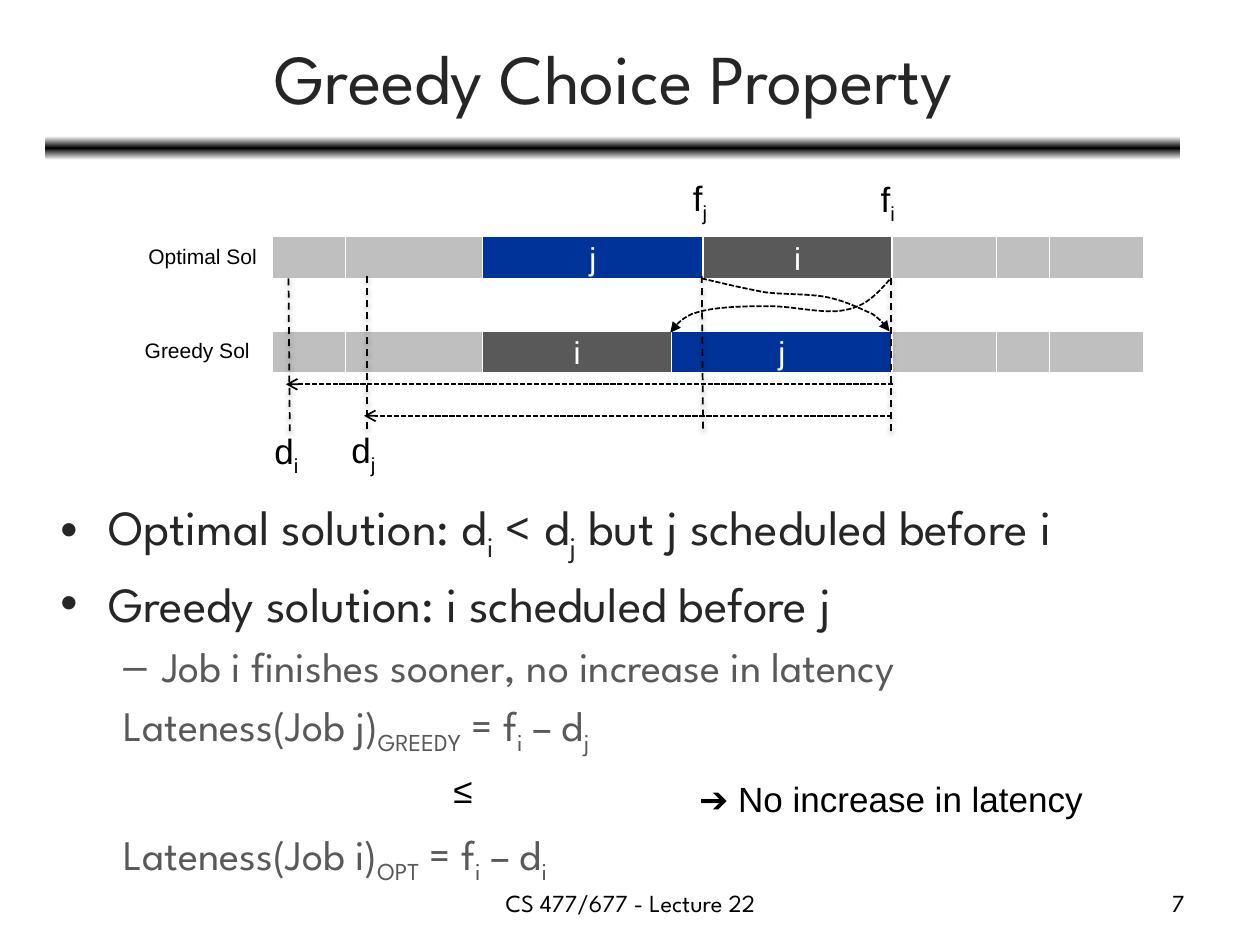
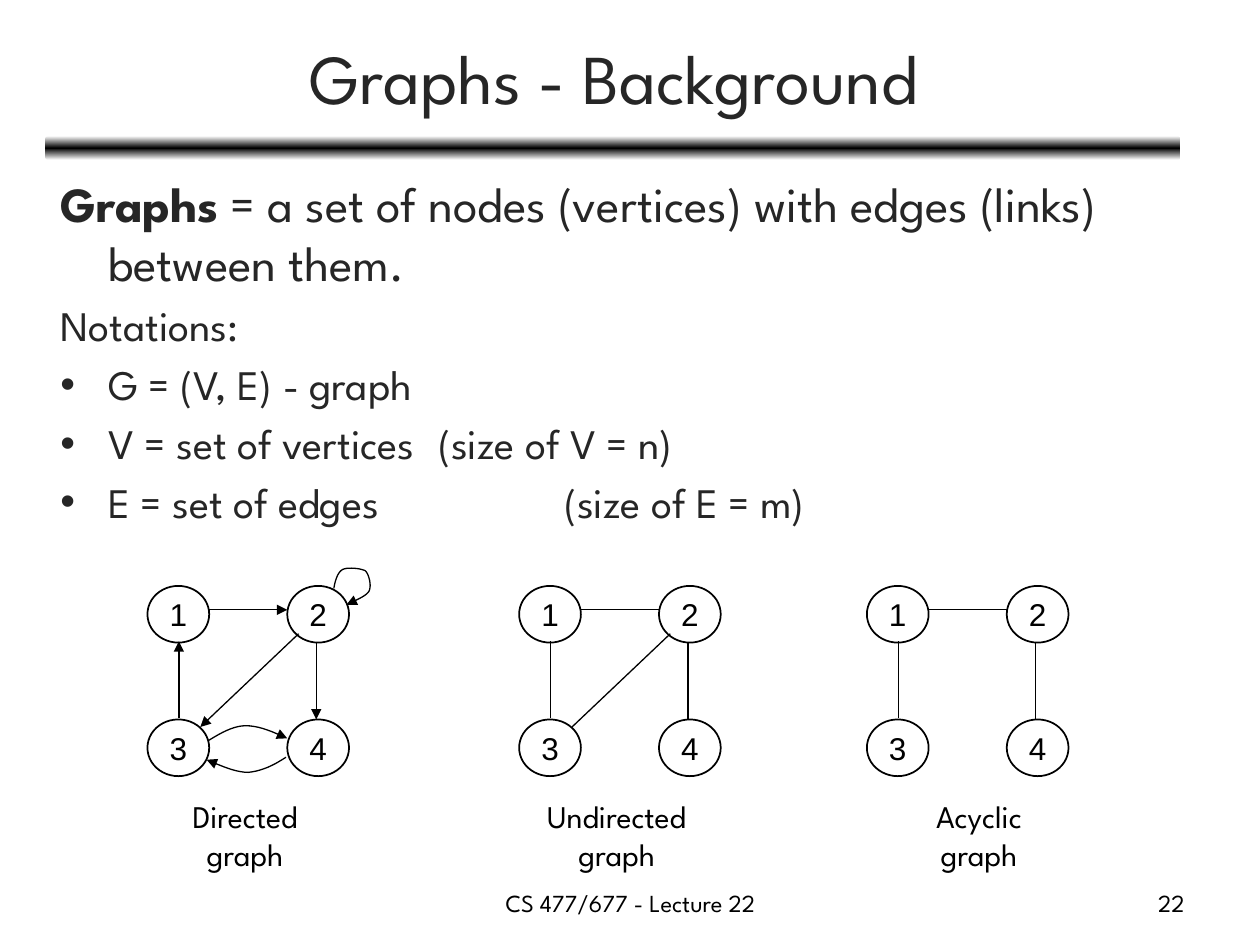
from copy import deepcopy
from math import comb

from lxml import etree
from pptx import Presentation
from pptx.dml.color import RGBColor
from pptx.enum.dml import MSO_LINE
from pptx.enum.shapes import MSO_CONNECTOR, MSO_SHAPE
from pptx.enum.text import MSO_ANCHOR, MSO_AUTO_SIZE, PP_ALIGN
from pptx.oxml.ns import qn
from pptx.util import Pt

PX = 9144  # 100 px to the inch
BLACK = RGBColor(0, 0, 0)
WHITE = RGBColor(255, 255, 255)
DARK = RGBColor(0x26, 0x26, 0x26)
GREY = RGBColor(0x59, 0x59, 0x59)
PALE = RGBColor(0xBF, 0xBF, 0xBF)
BLUE = RGBColor(0x00, 0x33, 0x99)
HEAD, SANS = "League Spartan", "Arial"
LEFT, MID, RIGHT = PP_ALIGN.LEFT, PP_ALIGN.CENTER, PP_ALIGN.RIGHT
RECT, OVAL, ROUND = MSO_SHAPE.RECTANGLE, MSO_SHAPE.OVAL, MSO_SHAPE.ROUNDED_RECTANGLE
DASH, DOTS = MSO_LINE.DASH, MSO_LINE.SQUARE_DOT
STRAIGHT = MSO_CONNECTOR.STRAIGHT
MIDDLE, FIXED = MSO_ANCHOR.MIDDLE, MSO_AUTO_SIZE.NONE


def write(par, text, size, color, font=HEAD, align=LEFT):
    """Add text run by run; every second part between bars is a subscript."""
    par.alignment = align
    for n, part in enumerate(text.split("|")):
        if part:
            run = par.add_run()
            run.text = part
            run.font.size, run.font.name = Pt(size), font
            run.font.color.rgb = color
            if n % 2:
                run.font._element.set("baseline", "-25000")


def ink(shape, width, dash=None, tip=None):
    """Style a line or curve; long dashes carry a soft shadow."""
    shape.line.color.rgb = BLACK
    shape.line.width = Pt(width)
    if dash:
        shape.line.dash_style = dash
    props = shape.element.spPr
    if tip:
        etree.SubElement(props.find(qn("a:ln")), qn("a:tailEnd"), type=tip)
    for old in props.findall(qn("a:effectLst")):
        props.remove(old)
    effect = etree.SubElement(props, qn("a:effectLst"))
    if dash == DASH:
        shade = etree.SubElement(effect, qn("a:outerShdw"), blurRad="40000",
                                 dist="20000", dir="5400000", rotWithShape="0")
        tone = etree.SubElement(shade, qn("a:srgbClr"), val="000000")
        etree.SubElement(tone, qn("a:alpha"), val="38000")


deck = Presentation()
deck.slide_width, deck.slide_height = 1000 * PX, 750 * PX

# Text of both slides: level, left margin, indent, bullet, size, text
TOP = (0, 38, -38, "•", 28)
ITEM = (0, 38, -38, "•", 24)
SUB = (1, 50, 0, None, 24)
greedy = [
    (*TOP, "Optimal solution: d|i| < d|j| but j scheduled before i"),
    (*TOP, "Greedy solution: i scheduled before j"),
    (1, 81, -31, "–", 24, "Job i finishes sooner, no increase in latency"),
    (*SUB, "Lateness(Job j)|GREEDY| = f|i| – d|j"),
    (*SUB, "Lateness(Job i)|OPT| = f|i| – d|i"),
]
graphs = [
    (0, 38, -38, None, 28,
     "Graphs|| = a set of nodes (vertices) with edges (links) between them."),
    (0, 38, -38, None, 24, "Notations:"),
    (*ITEM, "G = (V, E) - graph"),
    (*ITEM, "V = set of vertices\t(size of V = n)"),
    (*ITEM, "E = set of edges\t\t(size of E = m)"),
]
plan = [
    ("Greedy Choice Property", greedy, (38, 389, 973, 299)),
    ("Graphs - Background", graphs, (38, 133, 900, 303)),
]

# Title, band and list on each slide
slides, lists = [], []
for name, rows, box in plan:
    slide = deck.slides.add_slide(deck.slide_layouts[1])
    slides.append(slide)
    title, body = slide.placeholders
    for hold, (x, y, w, h) in ((title, (37, 11, 900, 99)), (body, box)):
        hold.left, hold.top, hold.width, hold.height = x * PX, y * PX, w * PX, h * PX
        hold.text_frame.auto_size = FIXED
    title.text_frame.vertical_anchor = MIDDLE
    write(title.text_frame.paragraphs[0], name, 40, DARK, align=MID)

    band = slide.shapes.add_shape(ROUND, 36 * PX, 108 * PX, 901 * PX, 19 * PX)
    band.shadow.inherit = False
    band.line.fill.background()
    band.fill.gradient()
    band.fill.gradient_angle = 90
    stops = next(band.element.iter(qn("a:gsLst")))
    stops.append(deepcopy(stops[0]))
    for stop, at, color in zip(band.fill.gradient_stops, (0, 0.5, 1),
                               (WHITE, BLACK, WHITE)):
        stop.position, stop.color.rgb = at, color

    frame = body.text_frame
    lists.append(frame)
    for n, (level, edge, dent, mark, size, text) in enumerate(rows):
        par = frame.add_paragraph() if n else frame.paragraphs[0]
        par.level = level
        write(par, text, size, GREY if level else DARK)
        props = par._p.get_or_add_pPr()
        for key, val in (("marL", edge * PX), ("indent", dent * PX),
                         ("defTabSz", 100 * PX)):
            props.set(key, str(val))
        if mark:
            etree.SubElement(props, qn("a:buFont"), typeface=SANS)
            etree.SubElement(props, qn("a:buChar"), char=mark)
        else:
            etree.SubElement(props, qn("a:buNone"))

one, two = slides
lists[0].paragraphs[-1].space_before = Pt(41)  # room for the ≤ sign
lists[1].paragraphs[0].runs[0].font.bold = True

# Schedules: the greedy one swaps jobs i and j
pads = [(58, PALE, ""), (109, PALE, "")]
jobs = [(175, BLUE, "j"), (150, GREY, "i")]
rest = [(83, PALE, ""), (42, PALE, ""), (75, PALE, "")]
for y, pair in ((188, jobs), (263, jobs[::-1])):
    x = 216
    for w, color, job in pads + pair + rest:
        bar = one.shapes.add_shape(RECT, x * PX, y * PX, w * PX, 33 * PX)
        bar.shadow.inherit = False
        bar.fill.solid()
        bar.fill.fore_color.rgb = color
        bar.line.color.rgb = WHITE
        bar.line.width = Pt(0.75)
        if job:
            bar.text_frame.word_wrap = False
            bar.text_frame.vertical_anchor = MIDDLE
            write(bar.text_frame.paragraphs[0], job, 18, WHITE, SANS, MID)
        x += w

# Lines: slide, from, to, width, dash, tip
lines = [
    (one, 557, 219, 558, 342, 1, DASH, None),
    (one, 707, 221, 707, 344, 1, DASH, None),
    (one, 229, 221, 230, 344, 1, DASH, None),
    (one, 291, 219, 291, 342, 1, DASH, None),
    (one, 708, 330, 289, 330, 1, DOTS, "arrow"),
    (one, 709, 305, 227, 305, 1, DOTS, "arrow"),
]

# Graphs: nodes on a 2 by 2 grid, then the edges each graph has
edges = [(49, 19, 111, 19), (134, 45, 134, 106), (25, 105, 25, 44), (120, 38, 42, 112)]
for left, count, tip in ((117, 4, "triangle"), (412, 4, None), (688, 3, None)):
    for n in range(4):
        x, y = left + n % 2 * 111, 465 + n // 2 * 106
        node = two.shapes.add_shape(OVAL, x * PX, y * PX, 49 * PX, 45 * PX)
        node.fill.background()
        ink(node, 1)
        node.text_frame.word_wrap = False
        node.text_frame.vertical_anchor = MIDDLE
        write(node.text_frame.paragraphs[0], str(n + 1), 18, BLACK, SANS, MID)
    for xa, ya, xb, yb in edges[:count]:
        lines.append((two, left + xa, 465 + ya, left + xb, 465 + yb, 0.75, None, tip))

for slide, xa, ya, xb, yb, width, dash, tip in lines:
    link = slide.shapes.add_connector(STRAIGHT, xa * PX, ya * PX, xb * PX, yb * PX)
    ink(link, width, dash, tip)

# Curves: a start point, then three points for each cubic piece
curves = [
    (one, 1, DOTS, [(706, 222), (697, 232), (688, 243), (671, 246), (655, 250),
                    (626, 242), (606, 243), (587, 243), (565, 244), (553, 248),
                    (540, 251), (532, 264), (532, 264)]),
    (one, 1, DOTS, [(557, 221), (574, 225), (591, 229), (607, 232), (624, 234),
                    (643, 233), (657, 236), (671, 239), (683, 245), (692, 249),
                    (700, 254), (706, 263), (706, 263)]),
    (two, 0.75, None, [(165, 588), (175, 582), (185, 576), (195, 576),
                       (206, 576), (217, 581), (228, 586)]),
    (two, 0.75, None, [(227, 601), (218, 607), (208, 612), (197, 613),
                       (187, 613), (176, 608), (164, 603)]),
    (two, 0.75, None, [(265, 467), (266, 461), (268, 454), (272, 452), (276, 450),
                       (286, 451), (290, 453), (293, 456), (295, 465), (293, 469),
                       (291, 473), (283, 476), (275, 480)]),
]
STEPS = 10
for slide, width, dash, pts in curves:
    dots = []
    for n in range(0, len(pts) - 1, 3):
        for step in range(1, STEPS + 1):
            t = step / STEPS
            parts = [comb(3, k) * (1 - t) ** (3 - k) * t ** k for k in range(4)]
            dots.append([sum(part * pt[axis] for part, pt in zip(parts, pts[n:n + 4])) * PX
                         for axis in (0, 1)])
    pen = slide.shapes.build_freeform(pts[0][0] * PX, pts[0][1] * PX)
    pen.add_line_segments(dots, close=False)
    curve = pen.convert_to_shape()
    curve.fill.background()
    ink(curve, width, dash, "triangle")

# Labels: slide, box, text, size, font, align
labels = [
    (one, 108, 188, 107, 30, "Optimal Sol", 12, SANS, LEFT),
    (one, 105, 263, 112, 30, "Greedy Sol", 12, SANS, LEFT),
    (one, 540, 135, 32, 44, "f|j", 20, SANS, LEFT),
    (one, 689, 136, 32, 44, "f|i", 20, SANS, LEFT),
    (one, 269, 335, 40, 44, "d|j", 20, SANS, LEFT),
    (one, 208, 336, 40, 44, "d|i", 20, SANS, LEFT),
    (one, 350, 605, 36, 44, "≤", 20, SANS, LEFT),
    (one, 545, 612, 334, 44, "➔ No increase in latency", 20, SANS, LEFT),
    (two, 131, 628, 127, 71, "Directed\ngraph", 18, HEAD, MID),
    (two, 411, 628, 157, 71, "Undirected\ngraph", 18, HEAD, MID),
    (two, 721, 628, 112, 71, "Acyclic\ngraph", 18, HEAD, MID),
]
for slide, page in ((one, "7"), (two, "22")):
    labels += [(slide, 342, 700, 317, 35, "CS 477/677 - Lecture 22", 14, HEAD, MID),
               (slide, 717, 700, 233, 35, page, 14, HEAD, RIGHT)]
for slide, x, y, w, h, text, size, font, align in labels:
    frame = slide.shapes.add_textbox(x * PX, y * PX, w * PX, h * PX).text_frame
    frame.word_wrap = w > 200
    for n, row in enumerate(text.split("\n")):
        par = frame.add_paragraph() if n else frame.paragraphs[0]
        write(par, row, size, BLACK, font, align)

deck.save("out.pptx")
